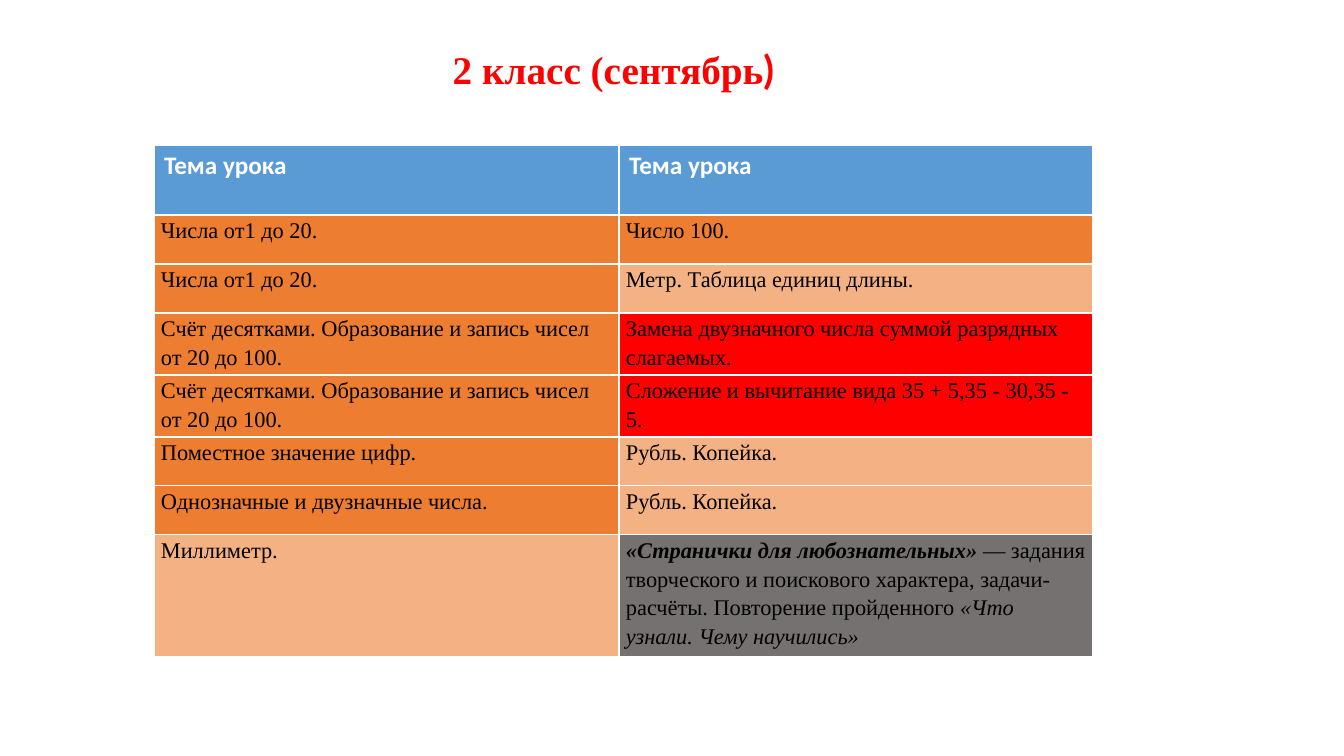
from dataclasses import dataclass

import pptx
import pptx.dml.color
import pptx.enum.text
import pptx.util

EMU_PER_PX = 9071

RED = pptx.dml.color.RGBColor(0xFF, 0x00, 0x00)
WHITE = pptx.dml.color.RGBColor(0xFF, 0xFF, 0xFF)
BLACK = pptx.dml.color.RGBColor(0x00, 0x00, 0x00)
BLUE = pptx.dml.color.RGBColor(0x5B, 0x9B, 0xD5)
ORANGE = pptx.dml.color.RGBColor(0xED, 0x7D, 0x31)
PEACH = pptx.dml.color.RGBColor(0xF4, 0xB1, 0x83)
GREY = pptx.dml.color.RGBColor(0x76, 0x71, 0x71)

SERIF = "Times New Roman"
COLUMN_WIDTHS = (465, 474)


@dataclass(frozen=True)
class Span:
    text: str
    size: int = 16
    font: str = SERIF
    color: pptx.dml.color.RGBColor = BLACK
    bold: bool = False
    italic: bool = False


@dataclass(frozen=True)
class Topic:
    fill: pptx.dml.color.RGBColor
    spans: tuple[Span, ...]


@dataclass(frozen=True)
class LessonRow:
    height: int
    topics: tuple[Topic, Topic]


def px(length: int) -> pptx.util.Emu:
    return pptx.util.Emu(length * EMU_PER_PX)


def topic(fill: pptx.dml.color.RGBColor, text: str) -> Topic:
    return Topic(fill, (Span(text),))


HEADING = Topic(BLUE, (Span("Тема урока", 18, "Calibri", WHITE, True),))
NUMBERS = topic(ORANGE, "Числа от1 до 20.")
TENS = topic(ORANGE, "Счёт десятками. Образование и запись чисел от 20 до 100.")
ROUBLE = topic(PEACH, "Рубль. Копейка.")
CURIOUS = Topic(GREY, (
    Span("«Странички для любознательных» ", bold=True, italic=True),
    Span("— задания творческого и поискового характера, "
         "задачи-расчёты. Повторение пройденного "),
    Span("«Что узнали. Чему научились»", italic=True),
))

TITLE = (
    Span("2 класс (сентябрь", 28, SERIF, RED, True),
    Span(")", 28, "Lato", RED, True),
)

LESSONS = (
    LessonRow(70, (HEADING, HEADING)),
    LessonRow(49, (NUMBERS, topic(ORANGE, "Число 100."))),
    LessonRow(49, (NUMBERS, topic(PEACH, "Метр. Таблица единиц длины."))),
    LessonRow(62, (TENS, topic(
        RED, "Замена двузначного числа суммой разрядных слагаемых."))),
    LessonRow(62, (TENS, topic(
        RED, "Сложение и вычитание вида 35 + 5,35 - 30,35 - 5."))),
    LessonRow(49, (topic(ORANGE, "Поместное значение цифр."), ROUBLE)),
    LessonRow(49, (topic(ORANGE, "Однозначные и двузначные числа."), ROUBLE)),
    LessonRow(122, (topic(PEACH, "Миллиметр."), CURIOUS)),
)


def add_spans(paragraph, spans: tuple[Span, ...]) -> None:
    for span in spans:
        run = paragraph.add_run()
        run.text = span.text
        run.font.size = pptx.util.Pt(span.size)
        run.font.name = span.font
        run.font.color.rgb = span.color
        run.font.bold = span.bold
        run.font.italic = span.italic


def draw_title(slide) -> None:
    title = slide.shapes.title
    title.left, title.top, title.width, title.height = map(px, (251, 40, 700, 367))
    frame = title.text_frame
    frame.word_wrap = True
    frame.auto_size = pptx.enum.text.MSO_AUTO_SIZE.NONE
    frame.vertical_anchor = pptx.enum.text.MSO_ANCHOR.TOP
    frame.margin_left = px(35)
    paragraph = frame.paragraphs[0]
    paragraph.alignment = pptx.enum.text.PP_ALIGN.CENTER
    paragraph.line_spacing = 1.0
    add_spans(paragraph, TITLE)


def draw_topic(cell, content: Topic) -> None:
    cell.fill.solid()
    cell.fill.fore_color.rgb = content.fill
    paragraph = cell.text_frame.paragraphs[0]
    if content is not HEADING:
        cell.margin_left = cell.margin_right = px(7)
        cell.margin_top = cell.margin_bottom = 0
        paragraph.line_spacing = 1.15
        paragraph.space_after = pptx.util.Pt(10)
    add_spans(paragraph, content.spans)


def draw_lessons(slide) -> None:
    height = sum(lesson.height for lesson in LESSONS)
    lessons = slide.shapes.add_table(
        len(LESSONS), len(COLUMN_WIDTHS),
        px(154), px(145), px(sum(COLUMN_WIDTHS)), px(height)).table
    lessons.horz_banding = False
    for column, width in zip(lessons.columns, COLUMN_WIDTHS):
        column.width = px(width)
    for row, lesson in zip(lessons.rows, LESSONS):
        row.height = px(lesson.height)
        for cell, content in zip(row.cells, lesson.topics):
            draw_topic(cell, content)


def main() -> None:
    deck = pptx.Presentation()
    deck.slide_width, deck.slide_height = px(1344), px(756)
    slide = deck.slides.add_slide(deck.slide_layouts[5])
    draw_title(slide)
    draw_lessons(slide)
    deck.save("out.pptx")


if __name__ == "__main__":
    main()
